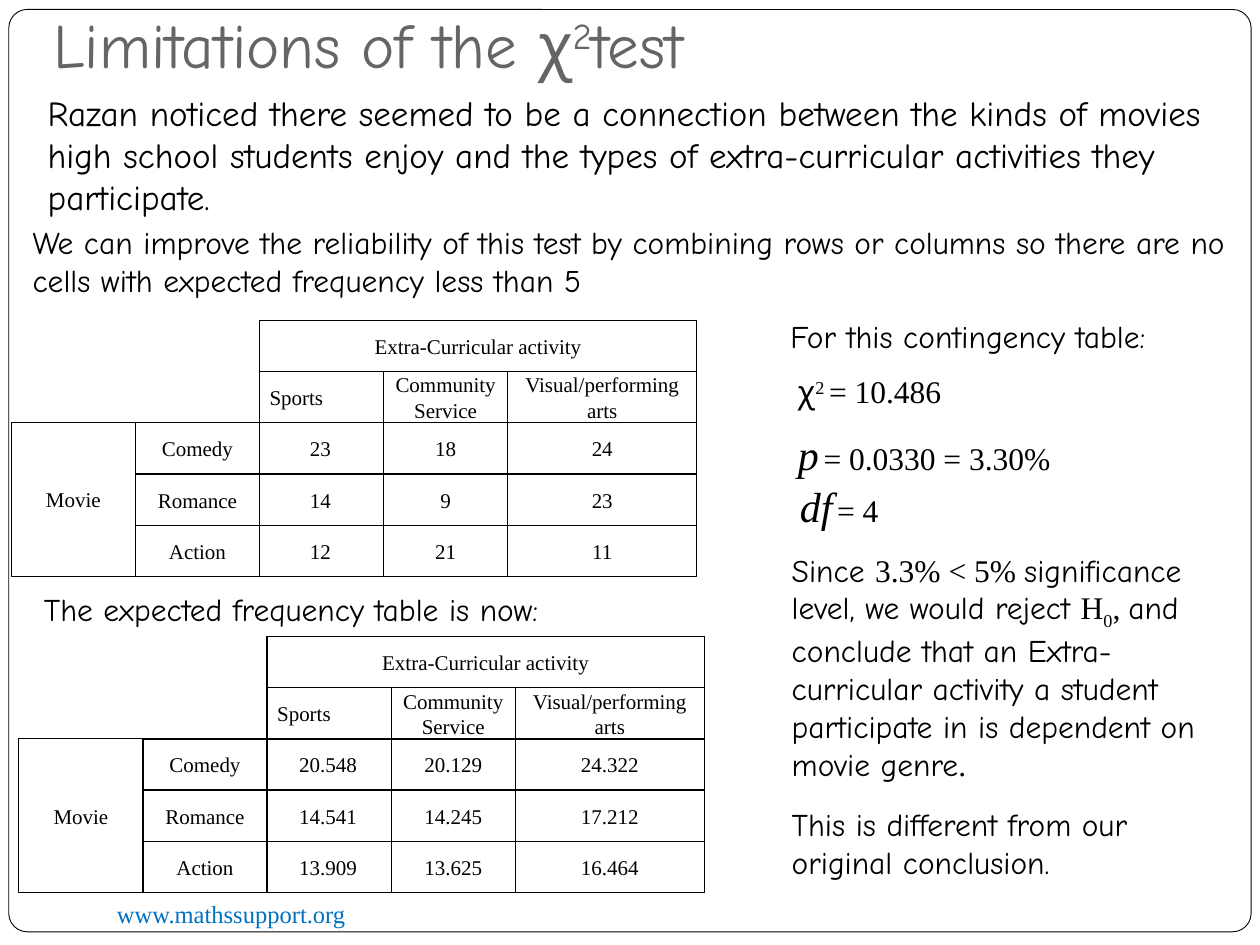
from typing import NamedTuple

from pptx import Presentation
from pptx import util as u
from pptx.dml.color import RGBColor
from pptx.enum import shapes, text

COMIC, TIMES = "Comic Neue", "Times New Roman"
BLACK, WHITE, GREY, BLUE = "000000", "FFFFFF", "696464", "0070C0"
INDENT = 0.07  # inches

prs = Presentation()
prs.slide_width, prs.slide_height = u.Inches(10), u.Inches(7.5)
slide = prs.slides.add_slide(prs.slide_layouts[6])


class Box(NamedTuple):
    """Left, top, width and height in percent of the slide's size."""
    left: float
    top: float
    width: float
    height: float


class Piece(NamedTuple):
    words: str
    font: str = COMIC
    size: float = 18
    italic: bool = False
    baseline: int = 0  # percent above or below the line
    color: str = BLACK


class Block(NamedTuple):
    box: Box
    pieces: list[Piece]
    indent: float = INDENT
    wrap: bool = True
    bottom: bool = False


class Cell(NamedTuple):
    """A span of the frequency grid."""
    row: int
    column: int
    words: str
    rows: int = 1
    columns: int = 1


class Frequencies(NamedTuple):
    left: float
    top: float
    counts: list[list[str]]


# Frequency grid in percent of the slide's size
COLUMNS = [9.85, 9.85, 9.85, 9.85, 15]
ROW = 5.42
# Left, top, right and bottom cell margins of each column in inches
MARGINS = [(0, 0, 0, 0), (0, 0, 0, 0), (0.08, 0.1, 0.1, 0.1),
           (0, 0, 0, 0), (0.04, 0, 0.04, 0)]
ACTIVITIES = ["Sports", "Community Service", "Visual/performing arts"]
GENRES = ["Comedy", "Romance", "Action"]


def rgb(value: str) -> RGBColor:
    return RGBColor.from_string(value)


def place(box: Box) -> list[int]:
    sizes = (prs.slide_width, prs.slide_height) * 2
    return [round(size * share / 100) for size, share in zip(sizes, box)]


def add_piece(paragraph, piece: Piece) -> None:
    run = paragraph.add_run()
    run.text = piece.words
    run.font.name = piece.font
    run.font.size = u.Pt(piece.size)
    run.font.italic = piece.italic
    run.font.color.rgb = rgb(piece.color)
    if piece.baseline:
        run.font._element.set("baseline", str(piece.baseline * 1000))


def draw_block(block: Block) -> None:
    frame = slide.shapes.add_textbox(*place(block.box)).text_frame
    frame.word_wrap = block.wrap
    if block.bottom:
        frame.vertical_anchor = text.MSO_ANCHOR.BOTTOM
        frame.margin_bottom = u.Inches(0.1)
    paragraph = frame.paragraphs[0]
    if block.indent:
        properties = paragraph._p.get_or_add_pPr()
        properties.set("marL", str(u.Inches(block.indent)))
        properties.set("indent", "0")
    for piece in block.pieces:
        add_piece(paragraph, piece)


def draw_outline(kind: shapes.MSO_SHAPE, box: Box, width: float):
    outline = slide.shapes.add_shape(kind, *place(box))
    outline.shadow.inherit = False
    outline.fill.background()
    outline.line.color.rgb = rgb(BLACK)
    outline.line.width = u.Pt(width)
    return outline


def draw_cell(data: Frequencies, cell: Cell) -> None:
    end = cell.column + cell.columns
    box = Box(data.left + sum(COLUMNS[:cell.column]),
              data.top + cell.row * ROW,
              sum(COLUMNS[cell.column:end]), cell.rows * ROW)
    frame = draw_outline(shapes.MSO_SHAPE.RECTANGLE, box, 0.75).text_frame
    frame.word_wrap = True
    margins = MARGINS[0 if cell.columns > 1 else cell.column]
    (frame.margin_left, frame.margin_top, frame.margin_right,
     frame.margin_bottom) = [u.Inches(margin) for margin in margins]
    frame.vertical_anchor = text.MSO_ANCHOR.MIDDLE
    paragraph = frame.paragraphs[0]
    paragraph.alignment = (text.PP_ALIGN.LEFT if cell.words == "Sports"
                           else text.PP_ALIGN.CENTER)
    add_piece(paragraph, Piece(cell.words, TIMES, 12))


def draw_frequencies(data: Frequencies) -> None:
    cells = [Cell(0, 2, "Extra-Curricular activity", columns=3),
             Cell(2, 0, "Movie", rows=3)]
    cells += [Cell(1, c, name) for c, name in enumerate(ACTIVITIES, 2)]
    for r, (genre, counts) in enumerate(zip(GENRES, data.counts), 2):
        cells += [Cell(r, c, words)
                  for c, words in enumerate([genre, *counts], 1)]
    for cell in cells:
        draw_cell(data, cell)


def draw_border(box: Box) -> None:
    border = draw_outline(shapes.MSO_SHAPE.ROUNDED_RECTANGLE, box, 0.5)
    border.adjustments[0] = 0.02
    border.fill.solid()
    border.fill.fore_color.rgb = rgb(WHITE)


BLOCKS = [
    # Footer, title and introduction
    Block(Box(8.3, 94.45, 32.5, 4.5),
          [Piece("www.mathssupport.org", TIMES, 14, color=BLUE)], indent=0),
    Block(Box(3.25, 0.05, 90, 9.9),
          [Piece("Limitations of the χ", size=36, color=GREY),
           Piece("2", size=36, baseline=30, color=GREY),
           Piece("test", size=36, color=GREY)], indent=0, bottom=True),
    Block(Box(2.1, 9, 95.9, 15.3),
          [Piece("Razan noticed there seemed to be a connection between the "
                 "kinds of movies high school students enjoy and the types of "
                 "extra-curricular activities they participate.", size=20)]),
    Block(Box(0.9, 22.95, 98.6, 9.4),
          [Piece("We can improve the reliability of this test by combining "
                 "rows or columns so there are no cells with expected "
                 "frequency less than 5")]),
    Block(Box(1.8, 61.75, 47, 5.4),
          [Piece("The expected frequency table is now:")], wrap=False),
    # Test results
    Block(Box(61.05, 32.85, 34.2, 5.4),
          [Piece("For this contingency table:")], wrap=False),
    Block(Box(62.35, 38.75, 14.3, 5.4),
          [Piece("χ"), Piece("2 ", TIMES, baseline=30),
           Piece("= 10.486", TIMES)], indent=0, wrap=False),
    Block(Box(62.35, 44.7, 23, 6.7),
          [Piece("p", TIMES, 24, italic=True), Piece(" ", TIMES, baseline=30),
           Piece("= 0.0330 = 3.30%", TIMES)], indent=0, wrap=False),
    Block(Box(62.5, 50.2, 8.4, 6.7),
          [Piece("df", TIMES, 24, italic=True), Piece(" ", TIMES, baseline=30),
           Piece("= 4", TIMES)], indent=0, wrap=False),
    # Conclusion
    Block(Box(61.15, 57.6, 37.8, 25.6),
          [Piece("Since "), Piece("3.3% < 5% ", TIMES),
           Piece("significance level, we would reject "), Piece("H", TIMES),
           Piece("0", TIMES, baseline=-25), Piece(", ", TIMES),
           Piece("and conclude that an Extra-curricular activity a student "
                 "participate in is dependent on movie genre"),
           Piece(".", TIMES)]),
    Block(Box(61.15, 84.5, 37.8, 9.4),
          [Piece("This is different from our original conclusion.")]),
]

OBSERVED = Frequencies(0.9, 33.9, [["23", "18", "24"],
                                   ["14", "9", "23"],
                                   ["12", "21", "11"]])
EXPECTED = Frequencies(1.5, 67.35, [["20.548", "20.129", "24.322"],
                                    ["14.541", "14.245", "17.212"],
                                    ["13.909", "13.625", "16.464"]])

draw_border(Box(0.7, 1, 98.6, 97.6))
for block in BLOCKS:
    draw_block(block)
for frequencies in (OBSERVED, EXPECTED):
    draw_frequencies(frequencies)

prs.save("out.pptx")
